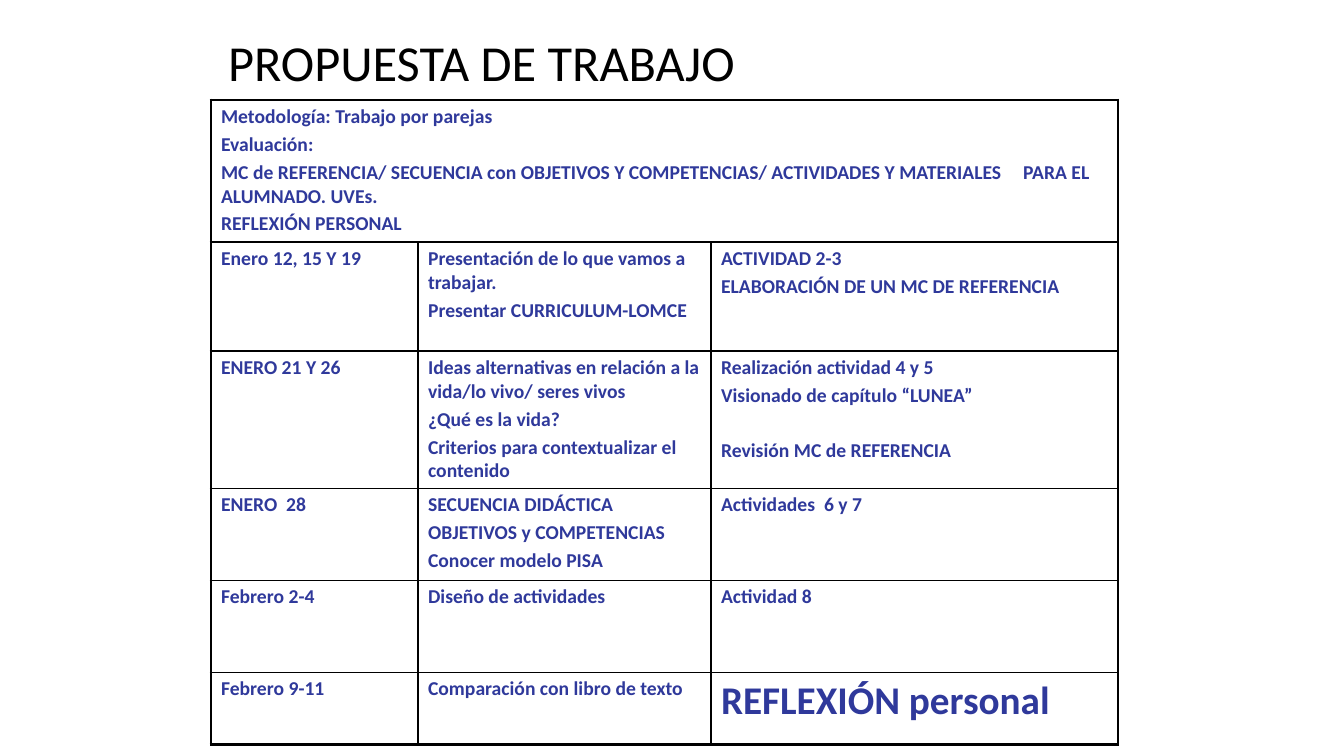
from lxml import etree
from pptx import Presentation
from pptx import util as u
from pptx.dml.color import RGBColor
from pptx.enum import text
from pptx.oxml.ns import qn

SCALE = 914400 / 100.8
FONT = "Calibri"
INK, BLUE = "000000", "2F399B"
THIN, THICK = 1, 2.25
COLS = [207, 293, 407]
ROWS = [142, 109, 137, 92, 92, 72]
TAB_STOP = 802
GAP_BEFORE = {"Revisión MC de REFERENCIA": 22.6}
SIZES = {"REFLEXIÓN personal": 28}
PLAN = [
    [["Metodología: Trabajo por parejas", "Evaluación:",
      "MC de REFERENCIA/ SECUENCIA con OBJETIVOS Y COMPETENCIAS/ "
      "ACTIVIDADES Y MATERIALES\tPARA EL ALUMNADO. UVEs.",
      "REFLEXIÓN PERSONAL"], [], []],
    [["Enero 12, 15 Y 19"],
     ["Presentación de lo que vamos a trabajar.", "Presentar CURRICULUM-LOMCE"],
     ["ACTIVIDAD 2-3", "ELABORACIÓN DE UN MC DE REFERENCIA"]],
    [["ENERO 21 Y 26"],
     ["Ideas alternativas en relación a la vida/lo vivo/ seres vivos",
      "¿Qué es la vida?", "Criterios para contextualizar el contenido"],
     ["Realización actividad 4 y 5", "Visionado de capítulo “LUNEA”",
      "Revisión MC de REFERENCIA"]],
    [["ENERO  28"],
     ["SECUENCIA DIDÁCTICA", "OBJETIVOS y COMPETENCIAS", "Conocer modelo PISA"],
     ["Actividades  6 y 7"]],
    [["Febrero 2-4"], ["Diseño de actividades"], ["Actividad 8"]],
    [["Febrero 9-11"], ["Comparación con libro de texto"], ["REFLEXIÓN personal"]],
]


def px(n):
    return u.Emu(round(n * SCALE))


def color(value):
    return RGBColor.from_string(value)


def write(p, line, size, ink, bold):
    r = p.add_run()
    r.text = line
    for name, value in {"name": FONT, "size": u.Pt(size), "bold": bold}.items():
        setattr(r.font, name, value)
    r.font.color.rgb = color(ink)


def add_tab_stop(p, pos):
    tabs = etree.SubElement(p._p.get_or_add_pPr(), qn("a:tabLst"))
    etree.SubElement(tabs, qn("a:tab"), pos=str(px(pos)), algn="l")


def set_borders(cell, widths):
    tcPr = cell._tc.get_or_add_tcPr()
    for i, (side, width) in enumerate(widths.items()):
        ln = etree.Element(qn("a:ln" + side), w=str(u.Pt(width)))
        fill = etree.SubElement(ln, qn("a:solidFill"))
        etree.SubElement(fill, qn("a:srgbClr"), val=INK)
        tcPr.insert(i, ln)


def fill_cell(cell, lines):
    cell.fill.background()
    tf = cell.text_frame
    for i, line in enumerate(lines):
        p = tf.paragraphs[0] if i == 0 else tf.add_paragraph()
        size = SIZES.get(line, 14)
        p.space_before = u.Pt(GAP_BEFORE.get(line, size * 0.2))
        if "\t" in line:
            add_tab_stop(p, TAB_STOP)
        write(p, line, size, BLUE, True)


def add_title(s, x, y, w, h):
    sp = s.shapes.title
    for name, n in {"left": x, "top": y, "width": w, "height": h}.items():
        setattr(sp, name, px(n))
    tf = sp.text_frame
    for name, value in {"vertical_anchor": text.MSO_ANCHOR.MIDDLE, "word_wrap": True,
                        "auto_size": text.MSO_AUTO_SIZE.NONE}.items():
        setattr(tf, name, value)
    p = tf.paragraphs[0]
    p.alignment, p.line_spacing = text.PP_ALIGN.LEFT, 0.9
    write(p, "PROPUESTA DE TRABAJO", 36, INK, False)


def add_plan(s, x, y, w, h):
    table = s.shapes.add_table(len(ROWS), len(COLS), px(x), px(y), px(w), px(h)).table
    table.first_row = table.horz_banding = False
    for col, n in zip(table.columns, COLS):
        col.width = px(n)
    for row, n in zip(table.rows, ROWS):
        row.height = px(n)
    table.cell(0, 0).merge(table.cell(0, len(COLS) - 1))
    for i, line in enumerate(PLAN):
        for j, lines in enumerate(line):
            cell = table.cell(i, j)
            fill_cell(cell, lines)
            whole = cell.is_merge_origin
            edges = {"L": j == 0, "R": whole or j == len(COLS) - 1,
                     "T": i == 0, "B": i == len(ROWS) - 1}
            set_borders(cell, {k: THICK if outer else THIN for k, outer in edges.items()})


def main():
    prs = Presentation()
    prs.slide_width, prs.slide_height = px(1344), px(756)
    s = prs.slides.add_slide(prs.slide_layouts[5])
    add_title(s, 218, 30, 907, 70)
    add_plan(s, 211, 100, sum(COLS), sum(ROWS))
    prs.save("out.pptx")


if __name__ == "__main__":
    main()
